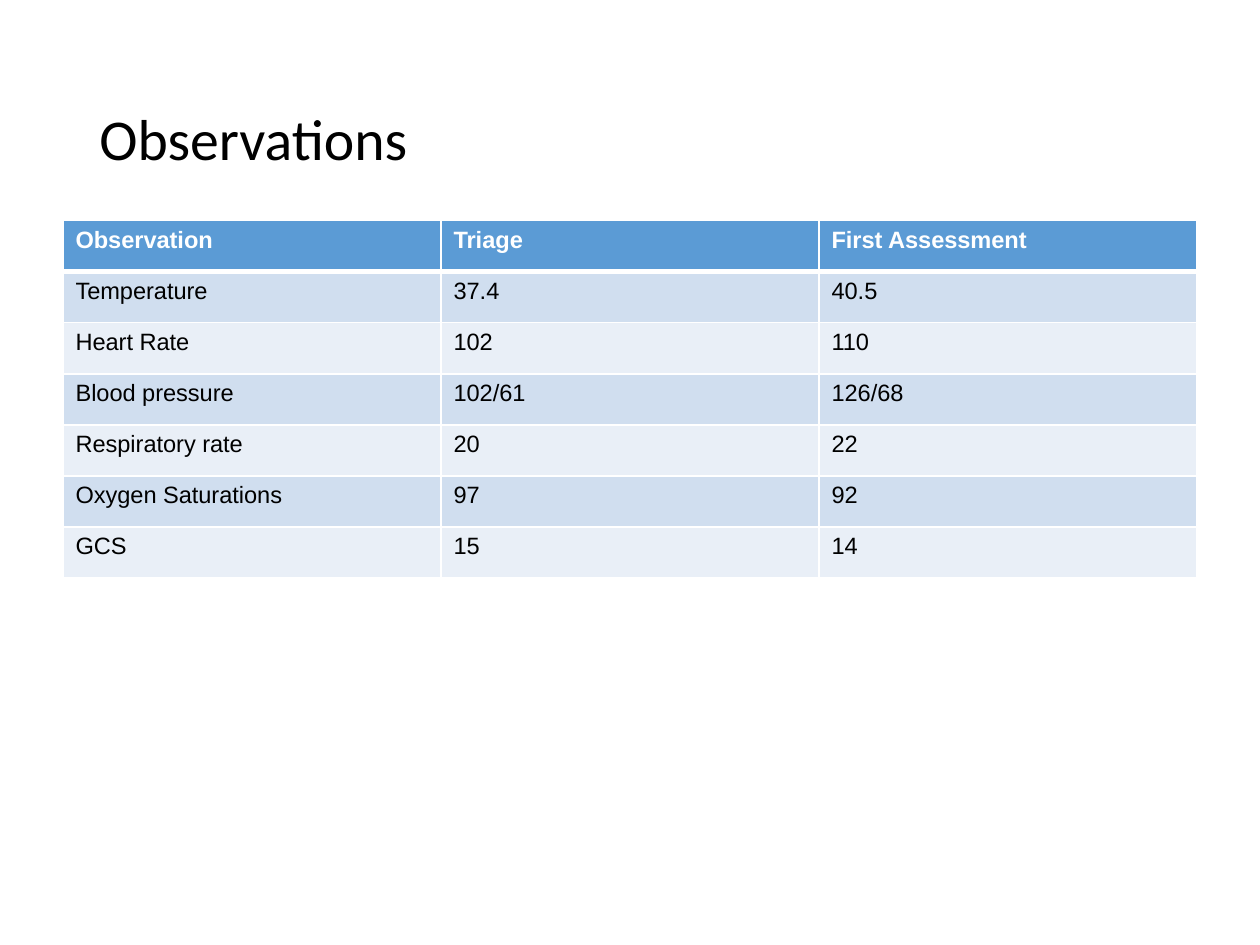
from lxml import etree
from pptx import Presentation
from pptx.dml.color import RGBColor
from pptx.enum.text import MSO_ANCHOR
from pptx.oxml.ns import qn
from pptx.util import Inches, Pt

MIDDLE = MSO_ANCHOR.MIDDLE
COLOURS = {
    "text": "000000",
    "header": "5B9BD5",
    "odd": "D0DEEF",
    "even": "E9EFF7",
    "white": "FFFFFF",
}
OBSERVATIONS = [
    ("Observation", "Triage", "First Assessment"),
    ("Temperature", "37.4", "40.5"),
    ("Heart Rate", "102", "110"),
    ("Blood pressure", "102/61", "126/68"),
    ("Respiratory rate", "20", "22"),
    ("Oxygen Saturations", "97", "92"),
    ("GCS", "15", "14"),
]
COLUMN_WIDTH = 3
TABLE_HEIGHT = 2.84


def add_span(para, text, font, size, colour, bold=False):
    """Add one formatted run to a paragraph."""
    span = para.add_run()
    span.text = text
    span.font.name = font
    span.font.size = Pt(size)
    span.font.bold = bold
    span.font.color.rgb = RGBColor.from_string(COLOURS[colour])


def add_title(page, text):
    """Add the slide title, centred vertically in its box."""
    box = page.shapes.add_textbox(Inches(0.69), Inches(0.4), Inches(8.62), Inches(1.45))
    frame = box.text_frame
    frame.word_wrap = True
    frame.vertical_anchor = MIDDLE
    para = frame.paragraphs[0]
    para.line_spacing = 0.9
    add_span(para, text, "Calibri", 33, "text")


def set_border(cell, side, width):
    """Give one side of a cell a solid white border."""
    properties = cell._tc.get_or_add_tcPr()
    line = etree.SubElement(properties, qn(f"a:ln{side}"), w=str(Pt(width)))
    fill = etree.SubElement(line, qn("a:solidFill"))
    etree.SubElement(fill, qn("a:srgbClr"), val=COLOURS["white"])


def style_cell(cell, row, last_row):
    """Set the borders and the banded fill of a cell."""
    top = 3 if row == 1 else 1
    bottom = 3 if row == 0 and last_row else 1
    for side, width in (("L", 1), ("R", 1), ("T", top), ("B", bottom)):
        set_border(cell, side, width)
    band = "header" if row == 0 else ("even", "odd")[row % 2]
    cell.fill.solid()
    cell.fill.fore_color.rgb = RGBColor.from_string(COLOURS[band])


def add_observation_table(page, records):
    """Add the table of observations with equal rows and columns."""
    row_count, column_count = len(records), len(records[0])
    table = page.shapes.add_table(
        row_count, column_count, Inches(0.5), Inches(1.75),
        Inches(COLUMN_WIDTH * column_count), Inches(TABLE_HEIGHT),
    ).table
    for row, record in enumerate(records):
        for column, text in enumerate(record):
            cell = table.cell(row, column)
            style_cell(cell, row, row_count - 1)
            colour = "white" if row == 0 else "text"
            add_span(cell.text_frame.paragraphs[0], text, "Arial", 13.5, colour, row == 0)


def main():
    """Build and save the deck."""
    deck = Presentation()
    deck.slide_width, deck.slide_height = Inches(10), Inches(7.5)
    page = deck.slides.add_slide(deck.slide_layouts[6])
    add_title(page, "Observations")
    add_observation_table(page, OBSERVATIONS)
    deck.save("out.pptx")


if __name__ == "__main__":
    main()
